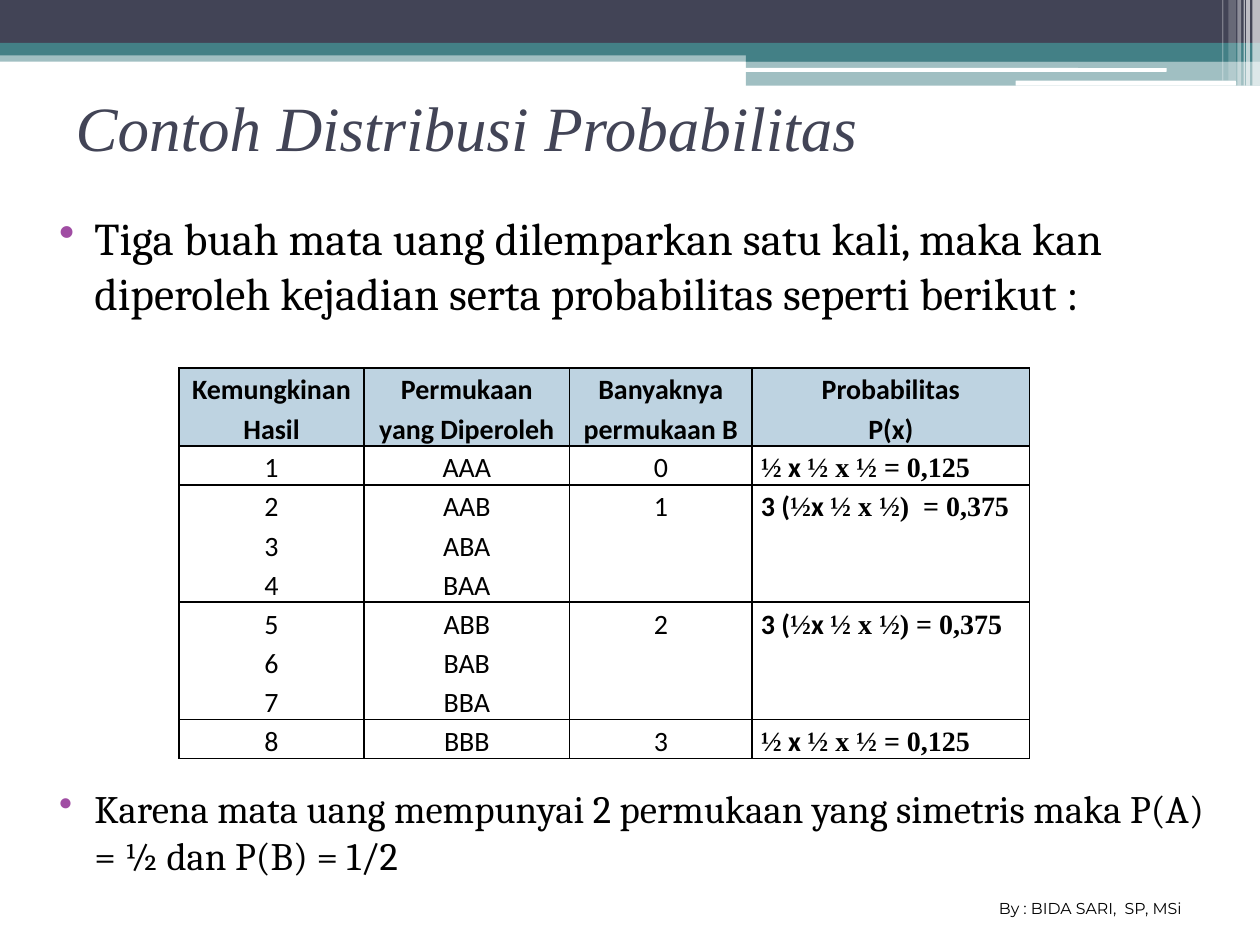
"""Build the slide on the probability distribution of three coin tosses."""
import pptx
import pptx.dml.color
import pptx.enum.shapes
import pptx.enum.text
import pptx.oxml
import pptx.oxml.ns
import pptx.util

COLORS = {
    "navy": "424456", "teal": "438086", "white": "FFFFFF",
    "black": "000000", "bullet": "A04DA3", "header": "BED3E1",
}
SERIF, SANS, BODY, LABEL = "Times New Roman", "Calibri", "Cambria", "Montserrat"
ALIGN = pptx.enum.text.PP_ALIGN
ANCHOR = pptx.enum.text.MSO_ANCHOR
SHAPE = pptx.enum.shapes.MSO_SHAPE

TITLE = "Contoh Distribusi Probabilitas"
BULLETS = [
    ("Tiga buah mata uang dilemparkan satu kali, maka kan diperoleh "
     "kejadian serta probabilitas seperti berikut :", 25.9, 0),
    ("Karena mata uang mempunyai 2 permukaan yang simetris maka "
     "P(A) = ½ dan P(B) = 1/2", 22.2, 266),
]
CREDIT = "By : BIDA SARI,  SP, MSi"

HEADER = [["Kemungkinan Hasil"], ["Permukaan yang Diperoleh"],
          ["Banyaknya permukaan B"], ["Probabilitas", "P(x)"]]
SINGLE = [("½", SERIF), (" x ", SANS), ("½ x ½ = 0,125", SERIF)]
TRIPLE = [("3 (", SANS), ("½", SERIF), ("x ", SANS)]
OUTCOMES = [
    (["1"], ["AAA"], ["0"], SINGLE),
    (["2", "3", "4"], ["AAB", "ABA", "BAA"], ["1"], TRIPLE + [("½ x ½)  = 0,375", SERIF)]),
    (["5", "6", "7"], ["ABB", "BAB", "BBA"], ["2"], TRIPLE + [("½ x ½) = 0,375", SERIF)]),
    (["8"], ["BBB"], ["3"], SINGLE),
]
COLUMNS = [1.47, 1.63, 1.45, 2.2]
ROW_LINES = [2, 1, 3, 3, 1]
LINE_HEIGHT = 0.31

BANDS = [
    (0, 0.4, 10, 0.09, "teal", 50),
    (0, 0, 10, 0.34, "navy", 100),
    (0, 0.34, 10, 0.1, "teal", 100),
    (5.92, 0.39, 4.08, 0.1, "teal", 100),
    (5.92, 0.48, 4.08, 0.2, "teal", 50),
]
PILLS = [(5.91, 0.54, 3.35, 0.03, "white", 100), (8.06, 0.64, 1.75, 0.04, "white", 100)]
STRIPES = [(9.94, 0.06, 0.68, 65), (9.89, 0.03, 0.68, 65), (9.87, 0.01, 0.68, 60),
           (9.82, 0.03, 0.68, 40), (9.75, 0.06, 0.64, 20), (9.7, 0.01, 0.64, 30)]


def inches(*values):
    return [pptx.util.Inches(value) for value in values]


def rgb(name):
    return pptx.dml.color.RGBColor.from_string(COLORS[name])


def apply(target, values):
    for name, value in values.items():
        setattr(target, name, value)


def style(font, face, size, color="black", **values):
    apply(font, {"name": face, "size": pptx.util.Pt(size), **values})
    font.color.rgb = rgb(color)


def add_child(parent, markup):
    declaration = pptx.oxml.ns.nsdecls("a")
    tag, rest = markup.split(" ", 1)
    parent.append(pptx.oxml.parse_xml(f"{tag} {declaration} {rest}"))


def add_bar(page, kind, left, top, width, height, color, opacity):
    bar = page.shapes.add_shape(kind, *inches(left, top, width, height))
    bar.shadow.inherit = False
    bar.fill.solid()
    bar.fill.fore_color.rgb = rgb(color)
    bar.line.fill.background()
    if opacity < 100:
        tint = bar.fill._xPr.find(".//" + pptx.oxml.ns.qn("a:srgbClr"))
        add_child(tint, f'<a:alpha val="{opacity * 1000}"/>')


def add_decoration(page):
    for band in BANDS:
        add_bar(page, SHAPE.RECTANGLE, *band)
    for pill in PILLS:
        add_bar(page, SHAPE.ROUNDED_RECTANGLE, *pill)
    for left, width, height, opacity in STRIPES:
        add_bar(page, SHAPE.RECTANGLE, left, 0, width, height, "white", opacity)


def add_title(page):
    title = page.shapes.title
    apply(title, dict(zip(("left", "top", "width", "height"), inches(0.5, 0.67, 9, 0.67))))
    title.text_frame.text = TITLE
    title.text_frame.vertical_anchor = ANCHOR.MIDDLE
    para = title.text_frame.paragraphs[0]
    para.alignment = ALIGN.LEFT
    style(para.font, SERIF, 36, "navy", italic=True)


def add_bullets(page):
    frame = page.shapes.add_textbox(*inches(0.25, 1.62, 9.42, 5.57)).text_frame
    frame.word_wrap = True
    for index, (text, size, gap) in enumerate(BULLETS):
        para = frame.add_paragraph() if index else frame.paragraphs[0]
        para.text = text
        para.space_before = pptx.util.Pt(gap)
        props = para._p.get_or_add_pPr()
        props.set("marL", str(pptx.util.Inches(0.4)))
        props.set("indent", str(pptx.util.Inches(-0.28)))
        add_child(props, f'<a:buClr ><a:srgbClr val="{COLORS["bullet"]}"/></a:buClr>')
        add_child(props, '<a:buChar char="•"/>')
        style(para.font, BODY, size)


def fill_cell(cell, paragraphs, alignment, bold, fill=None):
    apply(cell, dict(zip(("margin_left", "margin_top", "margin_right", "margin_bottom"),
                         inches(0.07, 0, 0.07, 0))))
    for index, spans in enumerate(paragraphs):
        frame = cell.text_frame
        para = frame.add_paragraph() if index else frame.paragraphs[0]
        apply(para, {"alignment": alignment, "line_spacing": 1.15})
        for text, face in spans:
            span = para.add_run()
            span.text = text
            style(span.font, face, 16, bold=bold)
    props = cell._tc.get_or_add_tcPr()
    for side in "LRTB":
        add_child(props, f'<a:ln{side} w="12700"><a:solidFill><a:srgbClr '
                         f'val="{COLORS["black"]}"/></a:solidFill></a:ln{side}>')
    if fill:
        cell.fill.solid()
        cell.fill.fore_color.rgb = rgb(fill)
    else:
        cell.fill.background()


def add_outcomes(page):
    size = inches(1.42, 2.92, sum(COLUMNS), sum(ROW_LINES) * LINE_HEIGHT)
    table = page.shapes.add_table(len(ROW_LINES), len(COLUMNS), *size).table
    for column, width in zip(table.columns, COLUMNS):
        column.width = pptx.util.Inches(width)
    for row, lines in zip(table.rows, ROW_LINES):
        row.height = pptx.util.Inches(lines * LINE_HEIGHT)
    for column, lines in enumerate(HEADER):
        fill_cell(table.cell(0, column), [[(line, SANS)] for line in lines],
                  ALIGN.CENTER, True, "header")
    for row, (*plain, formula) in enumerate(OUTCOMES, 1):
        for column, lines in enumerate(plain):
            fill_cell(table.cell(row, column), [[(line, SANS)] for line in lines],
                      ALIGN.CENTER, False)
        fill_cell(table.cell(row, len(plain)), [formula], ALIGN.LEFT, True)


def add_credit(page):
    frame = page.shapes.add_textbox(*inches(7.83, 7.08, 1.87, 0.25)).text_frame
    frame.word_wrap = False
    frame.text = CREDIT
    style(frame.paragraphs[0].font, LABEL, 9)


def main():
    deck = pptx.Presentation()
    deck.slide_width, deck.slide_height = inches(10, 7.5)
    page = deck.slides.add_slide(deck.slide_layouts.get_by_name("Title Only"))
    for add_part in (add_decoration, add_title, add_bullets, add_outcomes, add_credit):
        add_part(page)
    deck.save("out.pptx")


if __name__ == "__main__":
    main()
